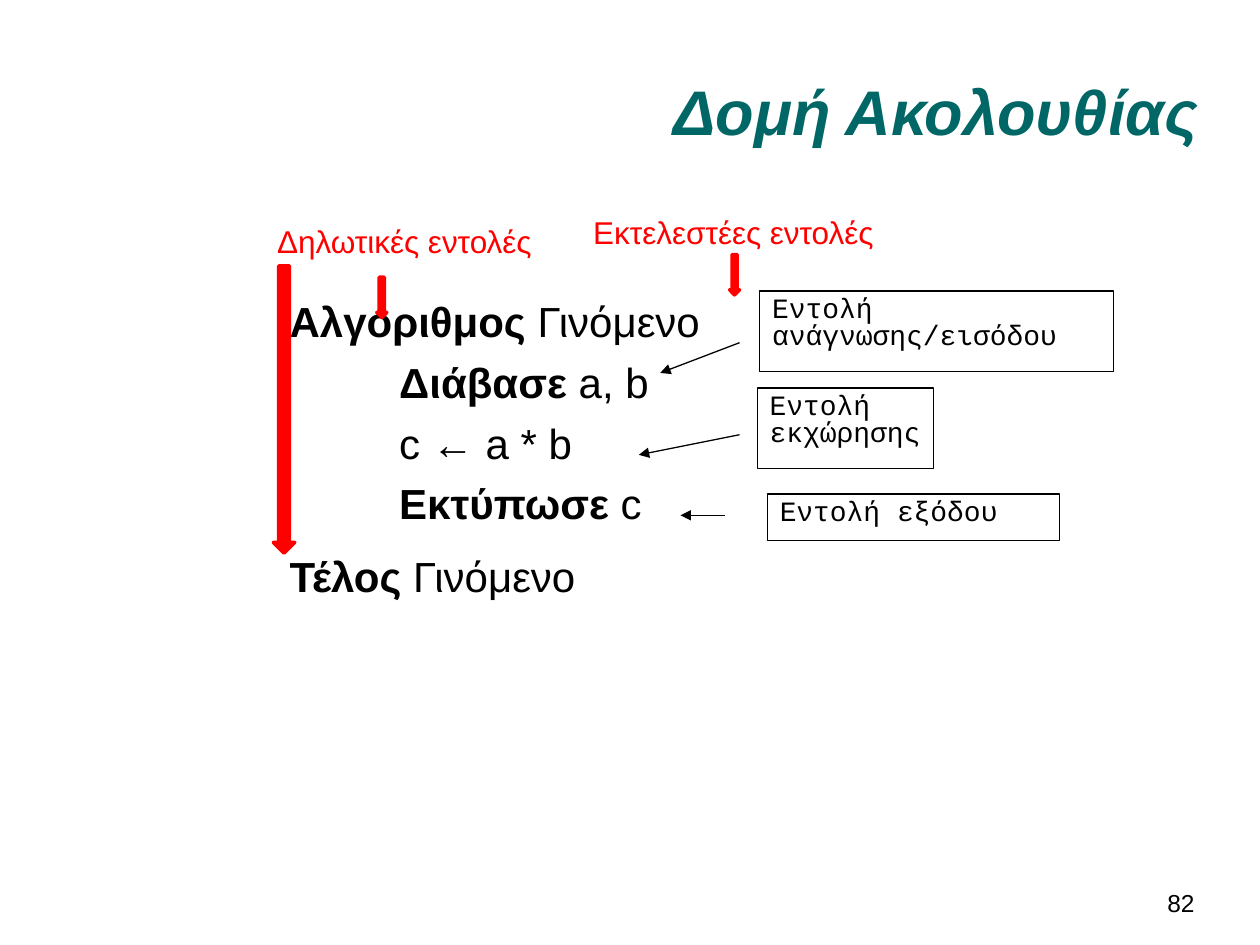
from lxml import etree
from pptx import Presentation
from pptx.dml.color import RGBColor
from pptx.enum import shapes, text
from pptx.oxml.ns import qn
from pptx.util import Inches, Pt

RED, BLACK, TEAL = "FF0000", "000000", "006666"


def rgb(color):
    return RGBColor.from_string(color)


def style(p, size, color, font="Arial", bold=None, italic=None):
    f = p.font
    f.name, f.size, f.bold, f.italic = font, Pt(size), bold, italic
    f.color.rgb = rgb(color)


prs = Presentation()
prs.slide_width, prs.slide_height = Inches(10), Inches(7.5)
s = prs.slides.add_slide(prs.slide_layouts[6])

# Slide number, title and red captions
LEFT, RIGHT = text.PP_ALIGN.LEFT, text.PP_ALIGN.RIGHT
TOP, MIDDLE = text.MSO_ANCHOR.TOP, text.MSO_ANCHOR.MIDDLE
for words, box, size, color, align, anchor, strong, spacing in [
    ("82", (8.08, 7, 1.5, 0.5), 14, BLACK, RIGHT, TOP, False, 1.0),
    ("Δομή Ακολουθίας", (1.83, 0.25, 7.78, 1.25), 36, TEAL, RIGHT, MIDDLE, True, 1.0),
    ("Δηλωτικές εντολές", (2.1, 1.77, 2.28, 0.4), 18, RED, LEFT, TOP, False, 0.8),
    ("Εκτελεστέες εντολές", (4.61, 1.7, 2.48, 0.4), 18, RED, LEFT, TOP, False, 0.8),
]:
    tf = s.shapes.add_textbox(*map(Inches, box)).text_frame
    tf.word_wrap = True
    tf.vertical_anchor = anchor
    p = tf.paragraphs[0]
    p.text, p.alignment, p.line_spacing = words, align, spacing
    style(p, size, color, bold=strong, italic=strong)

# Algorithm: keyword, rest of line, indent, space before
tf = s.shapes.add_textbox(Inches(1.82), Inches(2.3), Inches(6.21), Inches(2.6)).text_frame
tf.word_wrap = True
for i, (keyword, rest, indent, before) in enumerate([
    ("Αλγόριθμος", " Γινόμενο", 0.38, 0),
    ("Διάβασε", " a, b", 1.25, 5.8),
    ("", "c ← a * b", 1.25, 5.8),
    ("Εκτύπωσε", " c", 1.25, 5.8),
    ("Τέλος", " Γινόμενο", 0.38, 13),
]):
    p = tf.add_paragraph() if i else tf.paragraphs[0]
    p._p.get_or_add_pPr().set("marL", str(Inches(indent)))
    p.space_before = Pt(before)
    style(p, 24, BLACK)
    if keyword:
        r = p.add_run()
        r.text, r.font.bold = keyword, True
    p.add_run().text = rest

# Command notes, each with an arrow to its line
for words, box, start, end in [
    ("Εντολή ανάγνωσης/εισόδου", (6.03, 2.31, 2.81, 0.64), (5.87, 2.72), (5.24, 2.96)),
    ("Εντολή εκχώρησης", (6.01, 3.08, 1.4, 0.64), (5.87, 3.45), (5.07, 3.61)),
    ("Εντολή εξόδου", (6.09, 3.92, 2.32, 0.37), (5.75, 4.09), (5.4, 4.09)),
]:
    sp = s.shapes.add_shape(shapes.MSO_SHAPE.RECTANGLE, *map(Inches, box))
    sp.shadow.inherit = False
    sp.fill.background()
    tf = sp.text_frame
    tf.word_wrap = True
    tf.vertical_anchor = TOP
    tf.margin_right = Inches(0.05)
    p = tf.paragraphs[0]
    p.text, p.alignment, p.line_spacing = words, LEFT, 0.8
    style(p, 16, BLACK, "Courier New")

    arrow = s.shapes.add_connector(
        shapes.MSO_CONNECTOR.STRAIGHT, *map(Inches, start + end))
    for item in (sp, arrow):
        item.line.color.rgb = rgb(BLACK)
        item.line.width = Pt(0.75)
    etree.SubElement(arrow.line._get_or_add_ln(), qn("a:tailEnd"), type="triangle")
    etree.SubElement(arrow._element.spPr, qn("a:effectLst"))

# Red block arrows
for box in [(2.99, 2.2, 0.08, 0.32), (5.79, 2.02, 0.08, 0.32), (2.17, 2.11, 0.17, 2.28)]:
    sp = s.shapes.add_shape(shapes.MSO_SHAPE.DOWN_ARROW, *map(Inches, box))
    sp.shadow.inherit = False
    sp.fill.solid()
    sp.fill.fore_color.rgb = rgb(RED)
    sp.line.color.rgb = rgb(RED)
    sp.line.width = Pt(2)

prs.save("out.pptx")
